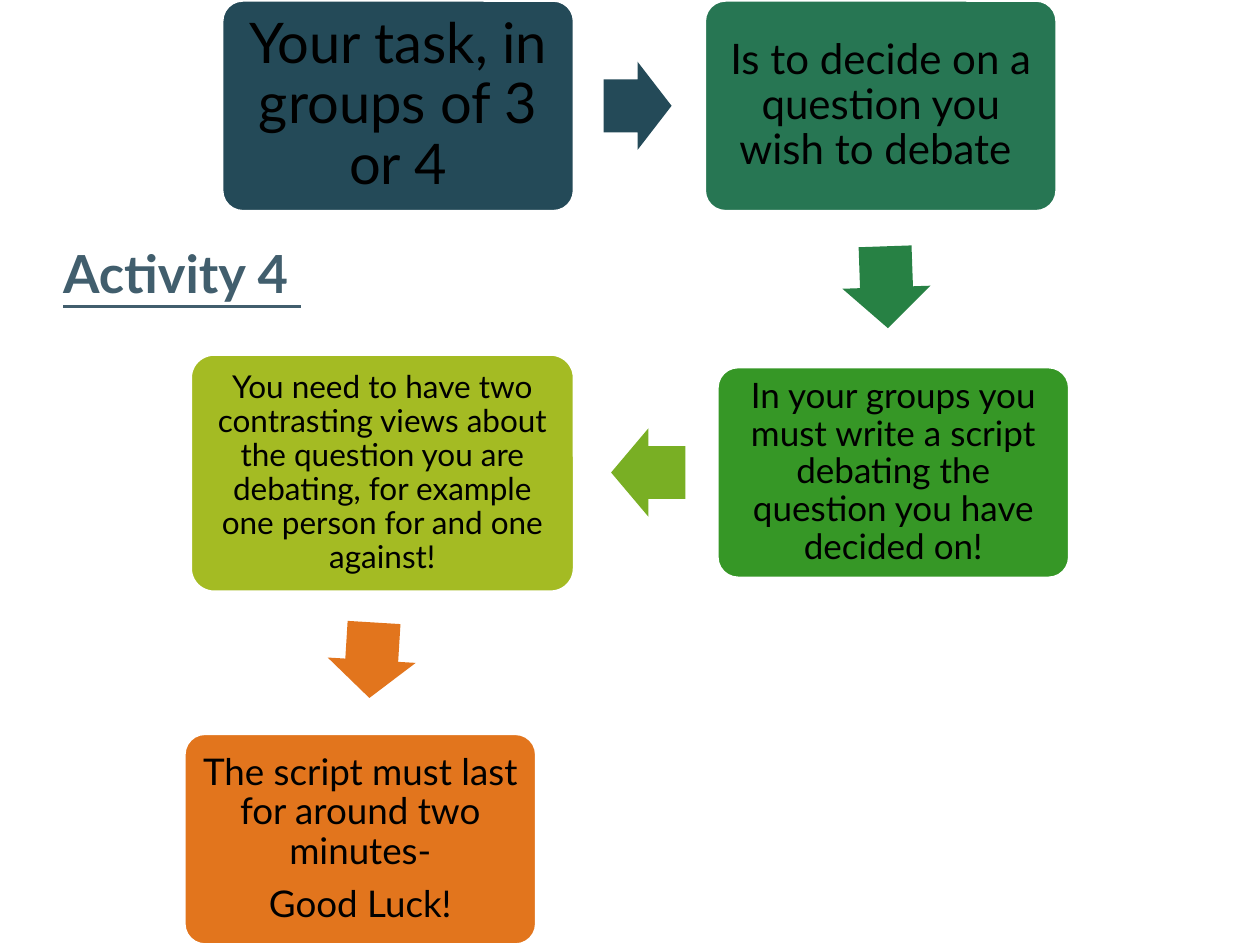
from pptx import Presentation
from pptx.dml.color import RGBColor
from pptx.enum.shapes import MSO_SHAPE as Shape
from pptx.enum.text import MSO_ANCHOR as Anchor, PP_ALIGN as Align
from pptx.util import Inches, Pt

FONT = "Lato"
COLOURS = {
    "navy": "244A58", "teal": "277653", "emerald": "278144",
    "green": "369726", "lime": "79AF24", "olive": "A4BB23",
    "orange": "E2751D", "title": "415E6D", "text": "000000", "border": "FFFFFF",
}

# box (left, top, width, height), colour, text size, margin, paragraphs
STEPS = [
    ((1.76, 0, 2.8, 1.68), "navy", 32, 0.13, ["Your task, in groups of 3 or 4"]),
    ((5.59, 0, 2.8, 1.68), "teal", 24, 0.1,
     ["Is to decide on a question you wish to debate "]),
    ((5.69, 2.91, 2.8, 1.68), "green", 20, 0.08,
     ["In your groups you must write a script debating the question you have decided on!"]),
    ((1.51, 2.81, 3.05, 1.89), "olive", 18, 0.07,
     ["You need to have two contrasting views about the question you are debating, "
      "for example one person for and one against!"]),
    ((1.46, 5.82, 2.8, 1.68), "orange", 21, 0.09,
     ["The script must last for around two minutes-", "Good Luck!"]),
]

# box, colour, rotation
ARROWS = [
    ((4.79, 0.49, 0.54, 0.7), "navy", 0),
    ((6.71, 1.93, 0.65, 0.7), "emerald", 88),
    ((4.85, 3.4, 0.59, 0.7), "lime", 180),
    ((2.65, 4.89, 0.6, 0.7), "orange", 93.5),
]


def rgb(name):
    return RGBColor.from_string(COLOURS[name])


def add_run(paragraph, text, size, colour):
    run = paragraph.add_run()
    run.text = text
    run.font.name = FONT
    run.font.size = Pt(size)
    run.font.color.rgb = rgb(colour)
    return run


def add_filled(slide, preset, box, colour):
    shape = slide.shapes.add_shape(preset, *map(Inches, box))
    shape.shadow.inherit = False
    shape.fill.solid()
    shape.fill.fore_color.rgb = rgb(colour)
    return shape


def add_step(slide, box, colour, size, margin, paragraphs):
    step = add_filled(slide, Shape.ROUNDED_RECTANGLE, box, colour)
    step.adjustments[0] = 0.1
    step.line.color.rgb = rgb("border")
    step.line.width = Pt(2)
    frame = step.text_frame
    frame.word_wrap = True
    frame.vertical_anchor = Anchor.MIDDLE
    frame.margin_left = frame.margin_right = Inches(margin)
    frame.margin_top = frame.margin_bottom = Inches(margin)
    for index, text in enumerate(paragraphs):
        paragraph = frame.add_paragraph() if index else frame.paragraphs[0]
        paragraph.alignment = Align.CENTER
        paragraph.line_spacing = 0.9
        if index:
            paragraph.space_before = Pt(0.35 * size)
        add_run(paragraph, text, size, "text")


def add_arrow(slide, box, colour, rotation):
    arrow = add_filled(slide, Shape.RIGHT_ARROW, box, colour)
    arrow.adjustments[0] = 0.6
    arrow.adjustments[1] = 0.5
    arrow.rotation = rotation
    arrow.line.fill.background()


def add_title(slide, box):
    frame = slide.shapes.add_textbox(*map(Inches, box)).text_frame
    frame.word_wrap = False
    paragraph = frame.paragraphs[0]
    paragraph.alignment = Align.CENTER
    title = add_run(paragraph, "Activity 4 ", 30, "title")
    title.font.bold = True
    title.font.underline = True


def main():
    prs = Presentation()
    prs.slide_width, prs.slide_height = Inches(10), Inches(7.5)
    slide = prs.slides.add_slide(prs.slide_layouts[6])
    for step in STEPS:
        add_step(slide, *step)
    for arrow in ARROWS:
        add_arrow(slide, *arrow)
    add_title(slide, (0.35, 1.86, 2.19, 0.61))
    prs.save("out.pptx")


if __name__ == "__main__":
    main()
